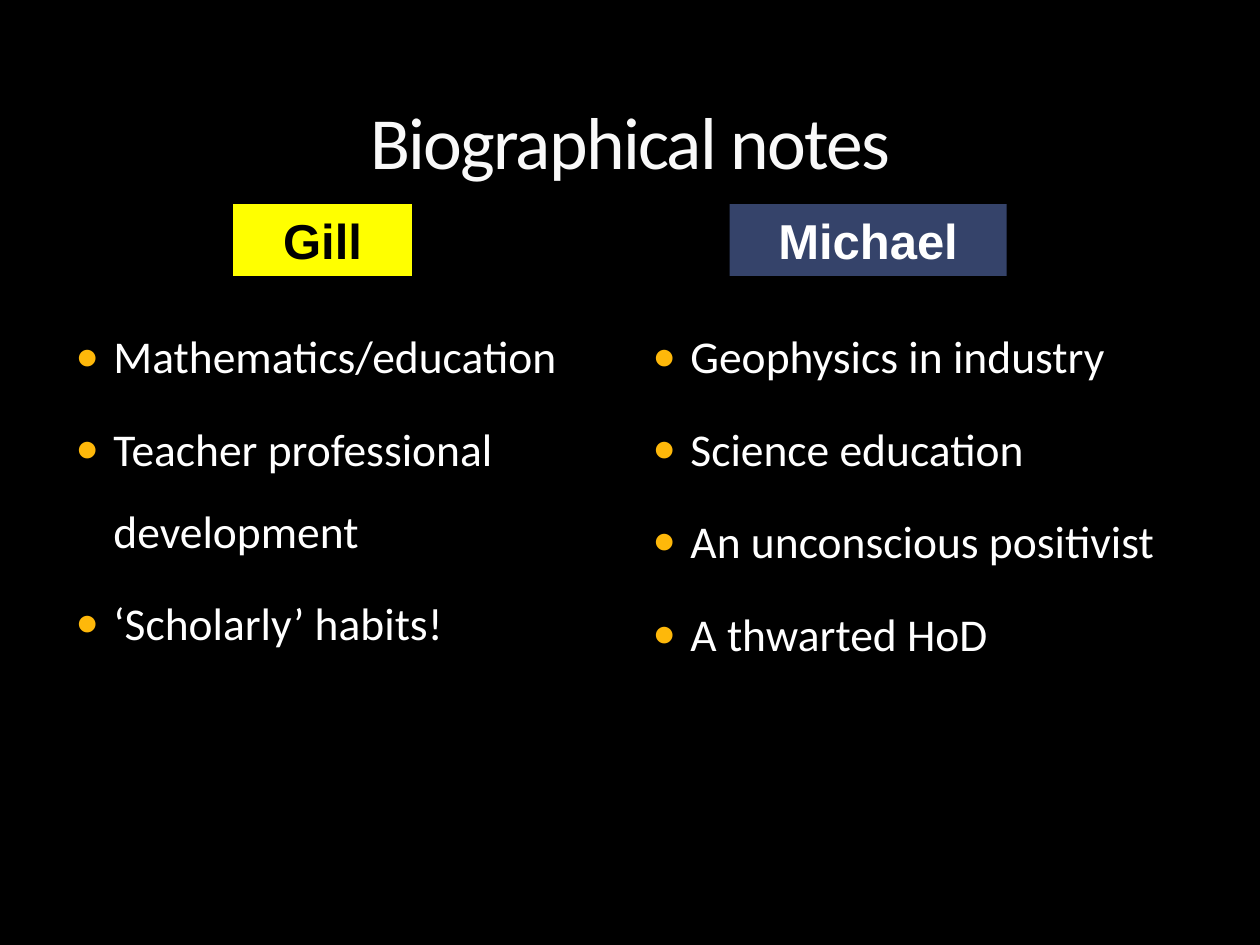
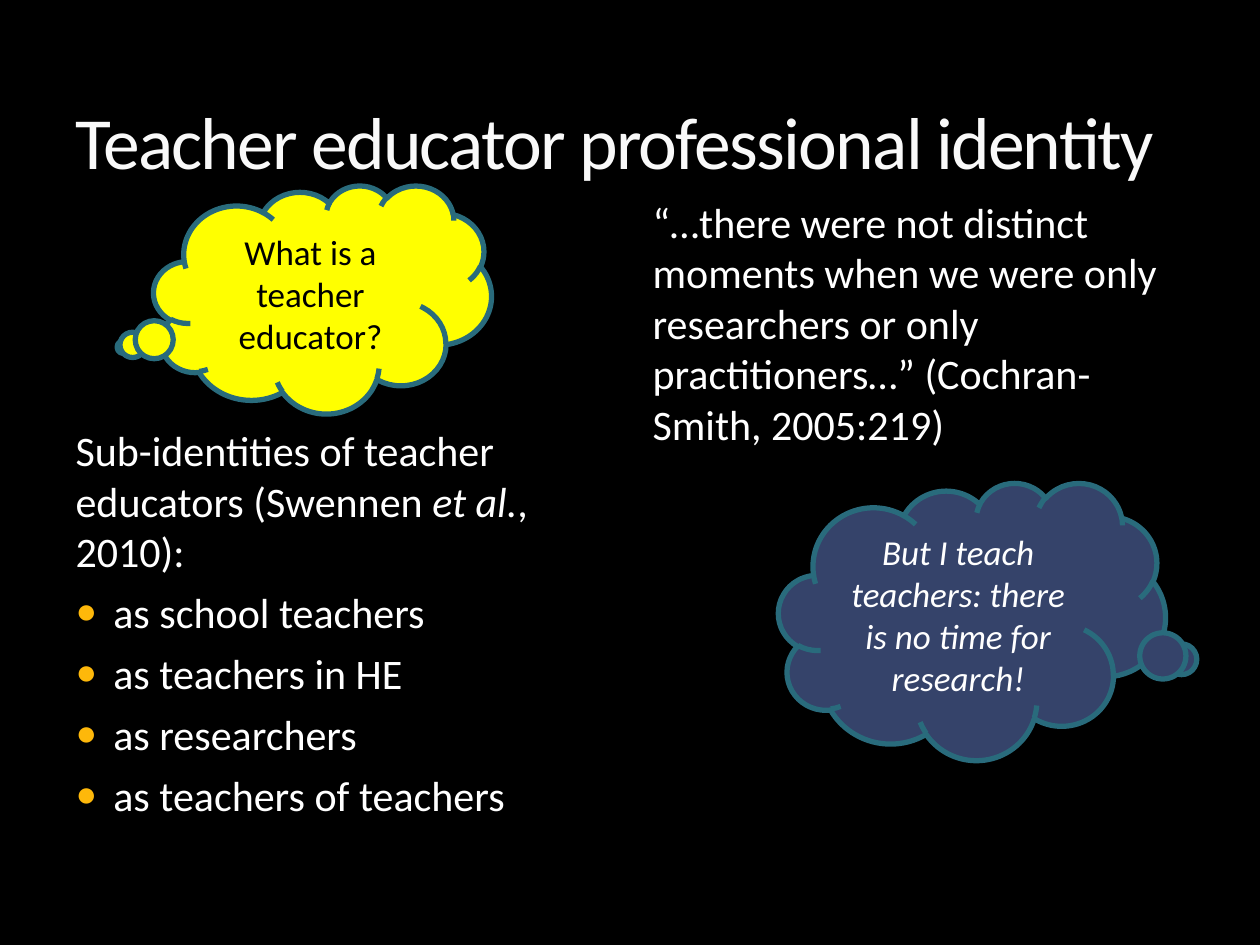
from dataclasses import dataclass

from lxml import etree
from pptx import Presentation
from pptx.dml.color import RGBColor
from pptx.enum import shapes, text
from pptx.oxml import ns
from pptx.util import Inches, Pt

BLACK, WHITE, TITLE_WHITE = "000000", "FFFFFF", "F9F9F9"
YELLOW, NAVY, TEAL, AMBER = "FFFF00", "35436A", "296B7C", "FEB80A"
TITLE_OUTLINE = "462219"
BODY_FONT, LABEL_FONT = "Calibri", "Arial"
LEFT_COLUMN, RIGHT_COLUMN, COLUMN_WIDTH = 0.5, 5.08, 4.44
BULLET_INDENT = 0.3
LABEL_CLEARANCE = 0.57
TWO_CONTENT_LAYOUT = 3


@dataclass
class Run:
    text: str
    italic: bool = False


@dataclass
class Item:
    runs: list[Run]
    bullet: bool = True


@dataclass
class Column:
    left: float
    top: float
    height: float
    size: float
    spacing: float
    items: list[Item]
    top_margin: float = 0.05


@dataclass
class Callout:
    kind: shapes.MSO_SHAPE
    box: tuple[float, float, float, float]
    run: Run
    fill: str
    color: str
    font: str = BODY_FONT
    size: float = 20
    bold: bool = False
    line: str | None = None
    tail: tuple[float, ...] = ()


def rgb(color: str) -> RGBColor:
    return RGBColor.from_string(color)


def add_node(parent, tag: str, **attributes: str):
    return etree.SubElement(parent, ns.qn(tag), attributes)


def place(shape, left: float, top: float, width: float, height: float) -> None:
    shape.left, shape.top = Inches(left), Inches(top)
    shape.width, shape.height = Inches(width), Inches(height)


def add_run(paragraph, run: Run, font: str, size: float, color: str, bold: bool = False):
    new_run = paragraph.add_run()
    new_run.text = run.text
    new_run.font.name, new_run.font.size = font, Pt(size)
    new_run.font.bold, new_run.font.italic = bold, run.italic
    new_run.font.color.rgb = rgb(color)
    return new_run


def set_bullet(paragraph, bullet: bool) -> None:
    """Give the paragraph an amber dot with a hanging indent, or neither."""
    properties = paragraph._p.get_or_add_pPr()
    indent = Inches(BULLET_INDENT) if bullet else 0
    properties.set("marL", str(indent))
    properties.set("indent", str(-indent))
    if bullet:
        add_node(add_node(properties, "a:buClr"), "a:srgbClr", val=AMBER)
        add_node(properties, "a:buSzPct", val="85000")
        add_node(properties, "a:buChar", char="●")
    else:
        add_node(properties, "a:buNone")


def set_title(slide, title: str, alignment: text.PP_ALIGN) -> None:
    shape = slide.shapes.title
    place(shape, 0.5, 0.17, 9, 1.34)
    frame = shape.text_frame
    frame.vertical_anchor = text.MSO_ANCHOR.BOTTOM
    frame.auto_size = text.MSO_AUTO_SIZE.NONE
    paragraph = frame.paragraphs[0]
    paragraph.alignment = alignment
    run = add_run(paragraph, Run(title), BODY_FONT, 42, TITLE_WHITE)
    properties = run._r.get_or_add_rPr()
    properties.set("spc", "-100")
    outline = add_node(properties, "a:ln", w=str(Pt(0.25)))
    color = add_node(add_node(outline, "a:solidFill"), "a:srgbClr", val=TITLE_OUTLINE)
    add_node(color, "a:alpha", val="25000")
    properties.insert(0, outline)


def fill_column(placeholder, column: Column) -> None:
    place(placeholder, column.left, column.top, COLUMN_WIDTH, column.height)
    frame = placeholder.text_frame
    frame.auto_size = text.MSO_AUTO_SIZE.NONE
    frame.margin_top = Inches(column.top_margin)
    for index, item in enumerate(column.items):
        paragraph = frame.add_paragraph() if index else frame.paragraphs[0]
        paragraph.line_spacing, paragraph.space_before = column.spacing, Pt(6)
        set_bullet(paragraph, item.bullet)
        for run in item.runs:
            add_run(paragraph, run, BODY_FONT, column.size, WHITE)


def add_callout(slide, callout: Callout) -> None:
    shape = slide.shapes.add_shape(callout.kind, *map(Inches, callout.box))
    shape.shadow.inherit = False
    for index, value in enumerate(callout.tail):
        shape.adjustments[index] = value
    shape.fill.solid()
    shape.fill.fore_color.rgb = rgb(callout.fill)
    if callout.line:
        shape.line.color.rgb = rgb(callout.line)
        shape.line.width = Pt(3)
    else:
        shape.line.fill.background()
    frame = shape.text_frame
    frame.word_wrap = True
    frame.vertical_anchor = text.MSO_ANCHOR.MIDDLE
    paragraph = frame.paragraphs[0]
    paragraph.alignment = text.PP_ALIGN.CENTER
    add_run(paragraph, callout.run, callout.font, callout.size, callout.color, callout.bold)


def name_label(name: str, left: float, width: float, fill: str, color: str) -> Callout:
    return Callout(shapes.MSO_SHAPE.RECTANGLE, (left, 1.62, width, 0.57), Run(name),
                   fill, color, LABEL_FONT, 28, bold=True)


def thought(run: Run, box: tuple[float, float, float, float], fill: str, color: str,
            tail: tuple[float, float]) -> Callout:
    return Callout(shapes.MSO_SHAPE.CLOUD_CALLOUT, box, run, fill, color,
                   line=TEAL, tail=tail)


def bullets(*lines: str) -> list[Item]:
    return [Item([Run(line)]) for line in lines]


def add_slide(presentation, title: str, alignment: text.PP_ALIGN,
              columns: list[Column], callouts: list[Callout]) -> None:
    slide = presentation.slides.add_slide(presentation.slide_layouts[TWO_CONTENT_LAYOUT])
    set_title(slide, title, alignment)
    for index, column in enumerate(columns, start=1):
        fill_column(slide.placeholders[index], column)
    for callout in callouts:
        add_callout(slide, callout)


def main() -> None:
    presentation = Presentation()
    presentation.slide_width, presentation.slide_height = Inches(10), Inches(7.5)
    background = presentation.slide_master.background.fill
    background.solid()
    background.fore_color.rgb = rgb(BLACK)

    add_slide(
        presentation, "Biographical notes", text.PP_ALIGN.CENTER,
        [Column(LEFT_COLUMN, 1.82, 5, 26, 1.5, bullets(
            "Mathematics/education", "Teacher professional development",
            "‘Scholarly’ habits!"), LABEL_CLEARANCE),
         Column(RIGHT_COLUMN, 1.82, 5.31, 26, 1.5, bullets(
             "Geophysics in industry", "Science education",
             "An unconscious positivist", "A thwarted HoD"), LABEL_CLEARANCE)],
        [name_label("Gill", 1.85, 1.42, YELLOW, BLACK),
         name_label("Michael", 5.79, 2.2, NAVY, WHITE)])

    sub_identities = Item([Run("Sub-identities of teacher educators (Swennen "),
                           Run("et al.", italic=True), Run(", 2010):")], bullet=False)
    quotation = Item([Run("“…there were not distinct moments when we were only researchers "
                          "or only practitioners…” (Cochran-Smith, 2005:219)")], bullet=False)
    add_slide(
        presentation, "Teacher educator professional identity", text.PP_ALIGN.LEFT,
        [Column(LEFT_COLUMN, 3.32, 3.43, 24, 1.0, [sub_identities, *bullets(
            "as school teachers", "as teachers in HE", "as researchers",
            "as teachers of teachers")]),
         Column(RIGHT_COLUMN, 1.51, 5, 24, 1.0, [quotation])],
        [thought(Run("What is a teacher educator?"), (1.22, 1.47, 2.68, 1.81),
                 YELLOW, BLACK, (-0.59, 0.21)),
         thought(Run("But I teach teachers: there is no time for research!", italic=True),
                 (6.18, 3.83, 3.07, 2.2), NAVY, WHITE, (0.55, 0.14))])

    presentation.save("out.pptx")


if __name__ == "__main__":
    main()
